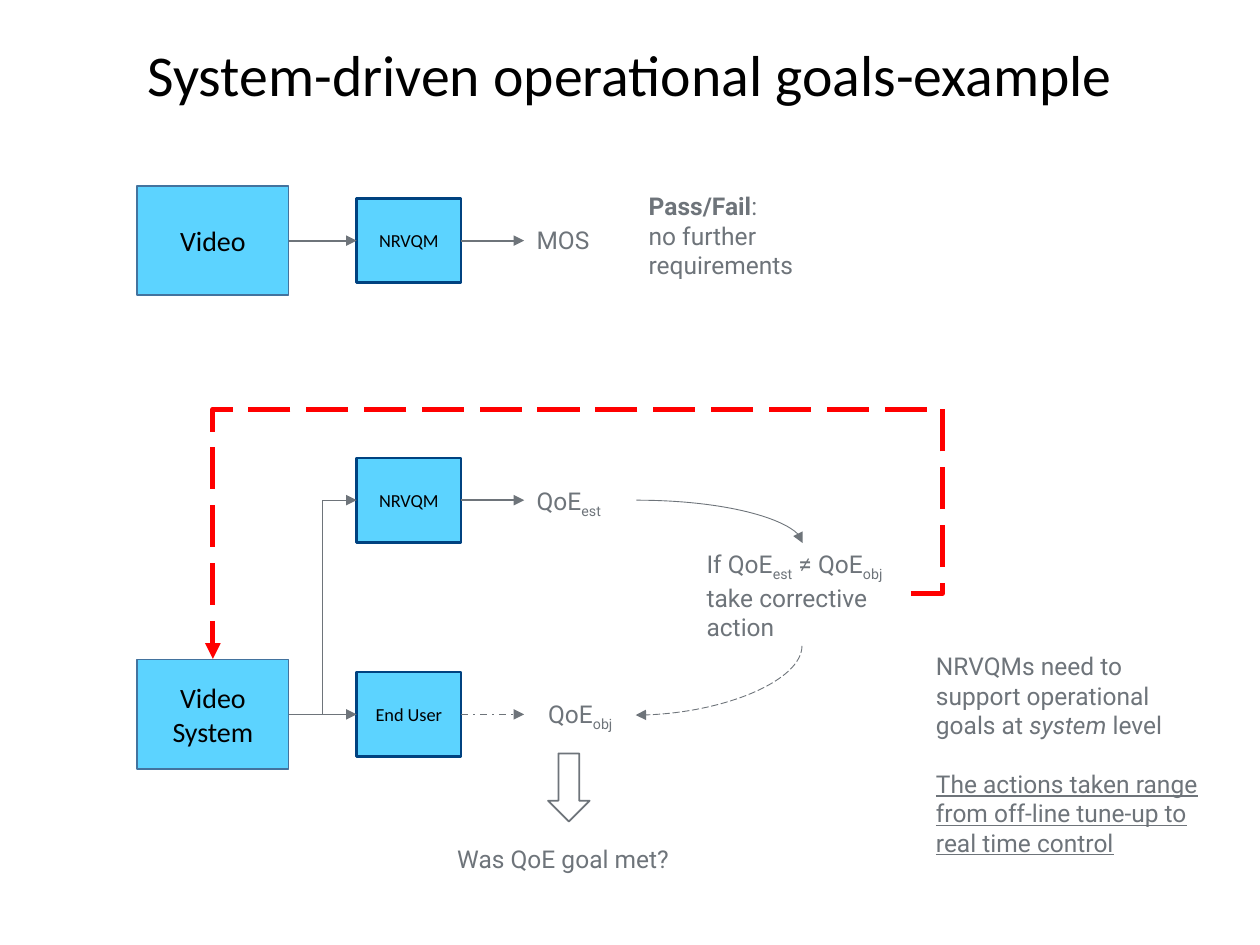
from pptx import Presentation
from pptx.dml.color import RGBColor
from pptx.enum.dml import MSO_LINE
from pptx.enum.shapes import MSO_CONNECTOR, MSO_SHAPE
from pptx.enum.text import MSO_ANCHOR, MSO_AUTO_SIZE, PP_ALIGN
from pptx.oxml.ns import qn
from pptx.util import Inches, Pt
from lxml import etree

LEFT, CENTER = PP_ALIGN.LEFT, PP_ALIGN.CENTER
MIDDLE = MSO_ANCHOR.MIDDLE
STRAIGHT, ELBOW, CURVE = MSO_CONNECTOR.STRAIGHT, MSO_CONNECTOR.ELBOW, MSO_CONNECTOR.CURVE
DASH, DASH_DOT = MSO_LINE.LONG_DASH, MSO_LINE.DASH_DOT

THEME = {
    "black": RGBColor.from_string("000000"),
    "gray": RGBColor.from_string("6E747A"),
    "box": RGBColor.from_string("5CD3FF"),
    "system_edge": RGBColor.from_string("43739E"),
    "module_edge": RGBColor.from_string("004280"),
    "feedback": RGBColor.from_string("FF0000"),
    "heading_font": "Calibri",
    "label_font": "Roboto",
    "title_size": 33,
    "system_size": 16,
    "module_size": 10.5,
    "label_size": 14,
    "paragraph_gap": 16.8,
}


def add_runs(paragraph, runs, font_name, size, color):
    for text, style in runs:
        run = paragraph.add_run()
        run.text = text
        run.font.name = font_name
        run.font.size = Pt(size)
        run.font.color.rgb = color
        if style == "bold":
            run.font.bold = True
        elif style == "italic":
            run.font.italic = True
        elif style == "underline":
            run.font.underline = True
        elif style == "subscript":
            run._r.get_or_add_rPr().set("baseline", "-25000")


def add_link(slide, kind, start, end, color, width, dash=None):
    connector = slide.shapes.add_connector(kind, *[Inches(value) for value in start + end])
    connector.line.color.rgb = color
    connector.line.width = Pt(width)
    if dash is not None:
        connector.line.dash_style = dash
    line = connector.line._get_or_add_ln()
    etree.SubElement(line, qn("a:tailEnd"), type="triangle")
    etree.SubElement(connector._element.spPr, qn("a:effectLst"))
    return connector


presentation = Presentation()
presentation.slide_width = Inches(10)
presentation.slide_height = Inches(7.5)
slide = presentation.slides.add_slide(presentation.slide_layouts[5])

title = slide.shapes.title
title.left, title.top, title.width, title.height = [Inches(value) for value in (1, 0.12, 8, 0.92)]
title.text_frame.vertical_anchor = MIDDLE
title_paragraph = title.text_frame.paragraphs[0]
title_paragraph.alignment = CENTER
add_runs(title_paragraph, [("System-driven operational goals-example", "")],
         THEME["heading_font"], THEME["title_size"], THEME["black"])

system_style = (1.09, 1.2, 0.87, THEME["system_edge"], 1, THEME["system_size"])
module_style = (2.83, 0.83, 0.67, THEME["module_edge"], 1.5, THEME["module_size"])
top_row, estimate_row, objective_row = 1.91, 3.97, 5.67
boxes = [
    ("Video", top_row, system_style),
    ("NRVQM", top_row, module_style),
    ("Video System", objective_row, system_style),
    ("End User", objective_row, module_style),
    ("NRVQM", estimate_row, module_style),
]
for text, row, (left, width, height, edge, edge_width, size) in boxes:
    shape = slide.shapes.add_shape(MSO_SHAPE.RECTANGLE, Inches(left), Inches(row - height / 2),
                                   Inches(width), Inches(height))
    shape.shadow.inherit = False
    shape.fill.solid()
    shape.fill.fore_color.rgb = THEME["box"]
    shape.line.color.rgb = edge
    shape.line.width = Pt(edge_width)
    shape.text_frame.word_wrap = True
    shape.text_frame.vertical_anchor = MIDDLE
    paragraph = shape.text_frame.paragraphs[0]
    paragraph.alignment = CENTER
    add_runs(paragraph, [(text, "")], THEME["heading_font"], size, THEME["black"])

labels = [
    ((5.05, 1.47, 2.04, 0.81), LEFT, [
        (0, [("Pass/Fail", "bold"), (":", "")]),
        (0, [("no further requirements", "")])]),
    ((4.16, 1.74, 0.65, 0.34), LEFT, [(0, [("MOS", "")])]),
    ((5.51, 4.31, 1.73, 0.81), LEFT, [
        (0, [("If QoE", ""), ("est", "subscript"), (" ≠ QoE", ""), ("obj", "subscript"),
             (" take corrective action", "")])]),
    ((4.16, 5.5, 0.89, 0.34), CENTER, [(0, [("QoE", ""), ("obj", "subscript")])]),
    ((4.16, 3.81, 0.89, 0.34), LEFT, [(0, [("QoE", ""), ("est", "subscript")])]),
    ((3.53, 6.65, 2.47, 0.34), LEFT, [(0, [("Was QoE goal met?", "")])]),
    ((7.33, 5.12, 2.34, 1.75), LEFT, [
        (0, [("NRVQMs need to", "")]),
        (0, [("support operational goals at ", ""), ("system", "italic"), (" level", "")]),
        (THEME["paragraph_gap"],
         [("The actions taken range from off-line tune-up to real time control", "underline")])]),
]
for position, alignment, paragraphs in labels:
    text_box = slide.shapes.add_textbox(*[Inches(value) for value in position])
    frame = text_box.text_frame
    frame.word_wrap = True
    frame.auto_size = MSO_AUTO_SIZE.SHAPE_TO_FIT_TEXT
    for index, (gap, runs) in enumerate(paragraphs):
        paragraph = frame.add_paragraph() if index else frame.paragraphs[0]
        paragraph.alignment = alignment
        paragraph.space_before = Pt(gap)
        add_runs(paragraph, runs, THEME["label_font"], THEME["label_size"], THEME["gray"])

system_right, module_left, module_right, label_left = 2.29, 2.83, 3.66, 4.16
flows = [
    (system_right, module_left, top_row, None),
    (module_right, label_left, top_row, None),
    (module_right, label_left, estimate_row, None),
    (system_right, module_left, objective_row, None),
    (module_right, label_left, objective_row, DASH_DOT),
]
for start, end, row, dash in flows:
    add_link(slide, STRAIGHT, (start, row), (end, row), THEME["gray"], 1, dash)

add_link(slide, ELBOW, (system_right, objective_row), (module_left, estimate_row), THEME["gray"], 0.5)

estimate_curve = add_link(slide, CURVE, (5.05, estimate_row), (6.37, 4.31), THEME["gray"], 0.5)
objective_curve = add_link(slide, CURVE, (5.43, 4.74), (5.98, 6.06), THEME["gray"], 0.5, DASH)
objective_curve._element.spPr.find(qn("a:xfrm")).set("rot", "5400000")
for curve in (estimate_curve, objective_curve):
    curve._element.spPr.find(qn("a:prstGeom")).set("prst", "curvedConnector2")

feedback = add_link(slide, ELBOW, (7.23, 4.71), (1.69, 5.23), THEME["feedback"], 3, DASH)
geometry = feedback._element.spPr.find(qn("a:prstGeom"))
geometry.set("prst", "bentConnector4")
adjustments = geometry.find(qn("a:avLst"))
if adjustments is None:
    adjustments = etree.SubElement(geometry, qn("a:avLst"))
for name, value in (("adj1", -4500), ("adj2", -281200)):
    etree.SubElement(adjustments, qn("a:gd"), name=name, fmla=f"val {value}")

goal_arrow = slide.shapes.add_shape(MSO_SHAPE.DOWN_ARROW, Inches(4.35), Inches(5.98),
                                    Inches(0.33), Inches(0.54))
goal_arrow.shadow.inherit = False
goal_arrow.fill.background()
goal_arrow.line.color.rgb = THEME["gray"]
goal_arrow.line.width = Pt(1)

presentation.save("out.pptx")
